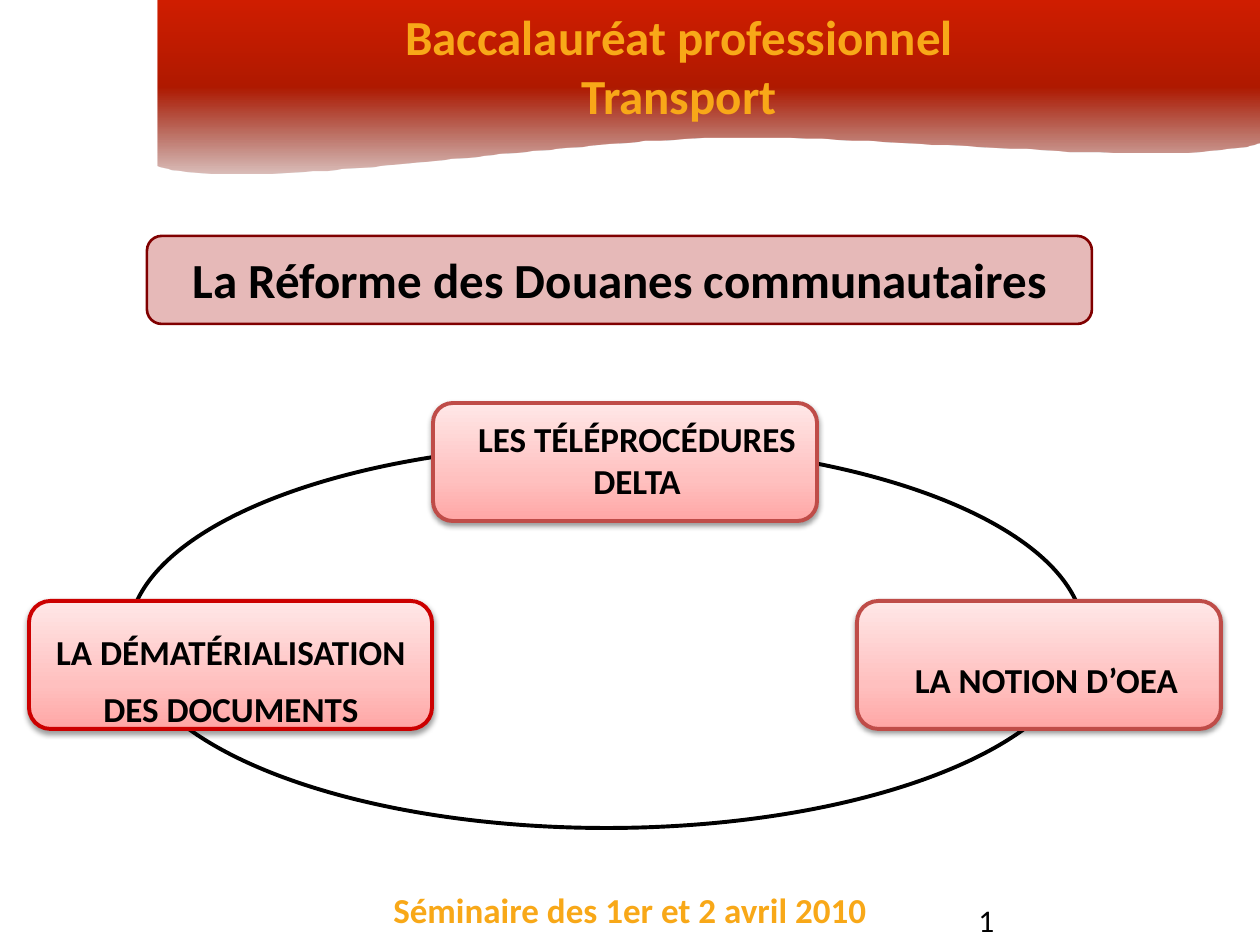
from lxml import etree
from pptx import Presentation
from pptx import util as u
from pptx.dml.color import RGBColor
from pptx.enum import shapes, text
from pptx.oxml.ns import qn

PX = u.Inches(1) / 126
BLACK = RGBColor(0x00, 0x00, 0x00)
WHITE = RGBColor(0xFF, 0xFF, 0xFF)
ORANGE = RGBColor(0xF8, 0xA8, 0x18)
ROSE = RGBColor(0xE6, 0xB9, 0xB8)
MAROON = RGBColor(0x80, 0x00, 0x00)
BRICK = RGBColor(0xBF, 0x4C, 0x48)
RED = RGBColor(0xCC, 0x00, 0x00)
BANNER_STOPS = [
    (0, RGBColor(0x7B, 0x11, 0x00), 27),
    (50, RGBColor(0xAF, 0x19, 0x00), 100),
    (100, RGBColor(0xD0, 0x1D, 0x00), 100),
]
TOPIC_STOPS = [
    (0, RGBColor(0xFF, 0xA6, 0xA5), 100),
    (35, RGBColor(0xFF, 0xC0, 0xBF), 100),
    (100, RGBColor(0xFF, 0xE7, 0xE7), 100),
]


def emu(pixels):
    return u.Emu(round(pixels * PX))


def child(parent, tag, **attributes):
    values = {name: str(value) for name, value in attributes.items()}
    return etree.SubElement(parent, qn(tag), values)


def bezier(start, control_1, control_2, end, steps=40):
    for step in range(1, steps + 1):
        t = step / steps
        weights = ((1 - t) ** 3, 3 * t * (1 - t) ** 2, 3 * t * t * (1 - t), t ** 3)
        points = (start, control_1, control_2, end)
        yield tuple(sum(w * p[axis] for w, p in zip(weights, points)) for axis in (0, 1))


class SlideBuilder:
    font = "Calibri"

    def __init__(self, presentation):
        self.slide = presentation.slides.add_slide(presentation.slide_layouts[5])

    def add_text(self, shape, lines, size, color, bold=True, inset=None,
                 align=text.PP_ALIGN.CENTER, margin=0, indent=0, spacing=None):
        frame = shape.text_frame
        frame.word_wrap = True
        frame.auto_size = text.MSO_AUTO_SIZE.NONE
        frame.vertical_anchor = text.MSO_ANCHOR.TOP
        if inset is not None:
            frame.margin_left = frame.margin_right = emu(inset)
            frame.margin_top = frame.margin_bottom = emu(inset)
        for index, line in enumerate(lines):
            paragraph = frame.add_paragraph() if index else frame.paragraphs[0]
            paragraph.alignment = align
            if margin or indent:
                properties = paragraph._p.get_or_add_pPr()
                properties.set("marL", str(emu(margin)))
                properties.set("indent", str(emu(indent)))
            if spacing:
                paragraph.line_spacing = spacing
            run = paragraph.add_run()
            run.text = line
            run.font.name = self.font
            run.font.size = u.Pt(size)
            run.font.bold = bold
            run.font.color.rgb = color

    def title(self, box, lines, size, color):
        shape = self.slide.shapes.title
        shape.left, shape.top, shape.width, shape.height = map(emu, box)
        self.add_text(shape, lines, size, color)
        shape.element.getparent().append(shape.element)

    def label(self, box, line, size, color, **style):
        shape = self.slide.shapes.add_textbox(*map(emu, box))
        self.add_text(shape, [line], size, color, **style)

    def gradient(self, shape, stops):
        shape.fill.gradient()
        shape.fill.gradient_angle = 90
        stop_list = shape.element.spPr.find(qn("a:gradFill")).find(qn("a:gsLst"))
        for stop in list(stop_list):
            stop_list.remove(stop)
        for position, color, opacity in stops:
            stop = child(stop_list, "a:gs", pos=position * 1000)
            fill = child(stop, "a:srgbClr", val=color)
            if opacity < 100:
                child(fill, "a:alpha", val=opacity * 1000)

    def banner(self, points, stops):
        builder = self.slide.shapes.build_freeform(*points[0], scale=PX)
        builder.add_line_segments(points[1:], close=True)
        shape = builder.convert_to_shape()
        shape.shadow.inherit = False
        self.gradient(shape, stops)
        shape.line.fill.background()

    def shape(self, kind, box, fill, line, width):
        shape = self.slide.shapes.add_shape(kind, *map(emu, box))
        shape.shadow.inherit = False
        if isinstance(fill, list):
            self.gradient(shape, fill)
        else:
            shape.fill.solid()
            shape.fill.fore_color.rgb = fill
        shape.line.color.rgb = line
        shape.line.width = u.Pt(width)
        return shape

    def panel(self, box, lines, size, fill, line, width, **style):
        kind = shapes.MSO_SHAPE.FLOWCHART_ALTERNATE_PROCESS
        shape = self.shape(kind, box, fill, line, width)
        self.add_text(shape, lines, size, BLACK, inset=9, **style)
        return shape

    def topic(self, box, lines, line, **style):
        shape = self.panel(box, lines, 20, TOPIC_STOPS, line, 2.25, **style)
        effects = shape.element.spPr.find(qn("a:effectLst"))
        shadow = child(effects, "a:outerShdw", blurRad=u.Pt(3.1), dist=u.Pt(1.6),
                       dir=5400000, rotWithShape=0)
        color = child(shadow, "a:srgbClr", val=BLACK)
        child(color, "a:alpha", val=38000)


def main():
    presentation = Presentation()
    presentation.slide_width = emu(1260)
    presentation.slide_height = emu(945)
    builder = SlideBuilder(presentation)

    builder.label((315, 882, 630, 55), "Séminaire des 1er et 2 avril 2010", 20, ORANGE)
    right, middle, left = (1260, 142), (718, 137), (158, 165)
    wave = [
        *bezier(right, (1171, 169), (902, 134), middle),
        *bezier(middle, (534, 141), (251, 193), left),
    ]
    builder.banner([(158, 0), (1260, 0), right, *wave], BANNER_STOPS)
    builder.title((364, 0, 630, 131), ["Baccalauréat professionnel", "Transport"], 28, ORANGE)

    builder.shape(shapes.MSO_SHAPE.OVAL, (129, 444, 955, 384), WHITE, BLACK, 2.25)
    builder.panel((147, 236, 945, 88), ["La Réforme des Douanes communautaires"],
                  28, ROSE, MAROON, 1.5)
    builder.topic((857, 601, 364, 128), ["LA NOTION D’OEA"], BRICK,
                  margin=14, indent=1, spacing=2.0)
    builder.label((966, 895, 294, 50), "1", 18, BLACK, bold=False,
                  align=text.PP_ALIGN.LEFT)
    builder.topic((29, 601, 403, 128), ["LA DÉMATÉRIALISATION", "DES DOCUMENTS"], RED,
                  indent=1, spacing=1.35)
    builder.topic((433, 403, 384, 118), ["LES TÉLÉPROCÉDURES DELTA"], BRICK, margin=24)
    presentation.save("out.pptx")


if __name__ == "__main__":
    main()
